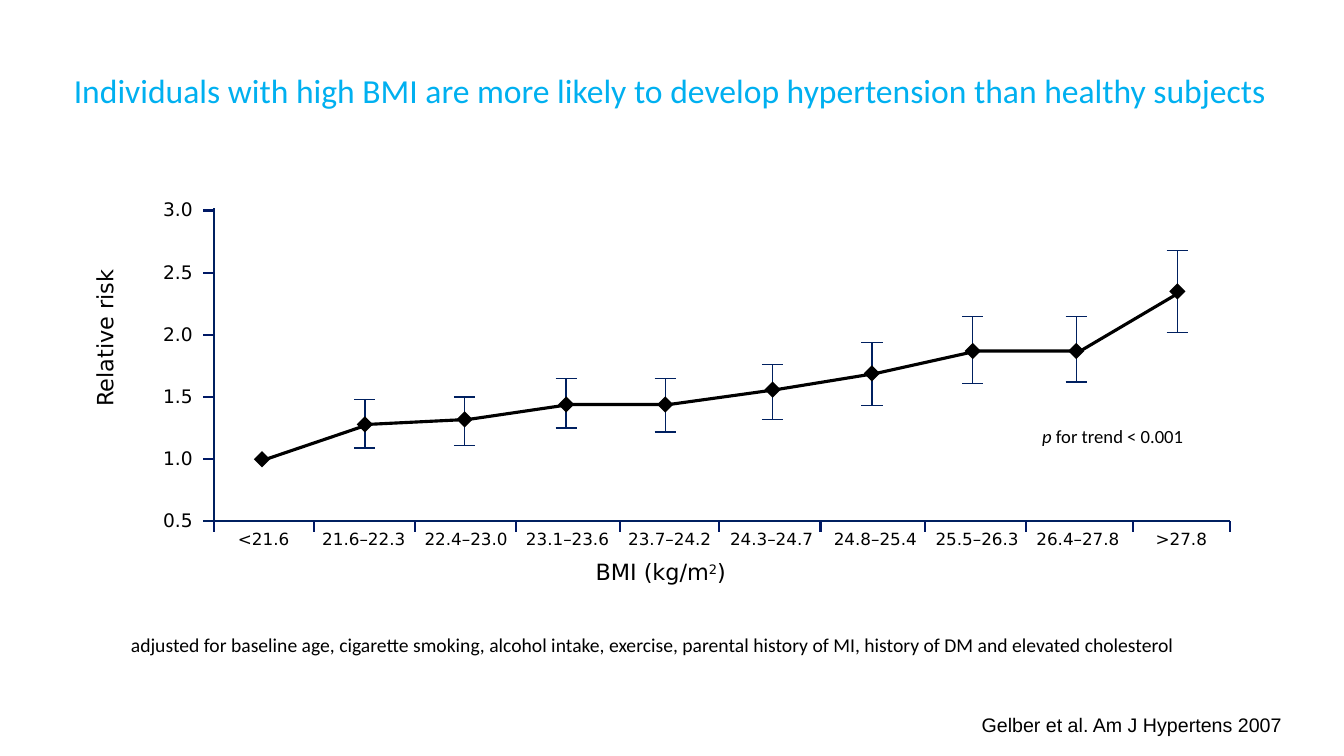
import pptx
import pptx.dml.color
import pptx.enum.shapes
import pptx.enum.text
import pptx.oxml
import pptx.oxml.ns
import pptx.util

Pt = pptx.util.Pt
ALIGN = pptx.enum.text.PP_ALIGN
ANCHOR = pptx.enum.text.MSO_ANCHOR

BLACK, TITLE_BLUE, AXIS_NAVY, TICK_NAVY = "000000", "00B0F0", "002060", "001965"
CHART_FONT = "DejaVu Sans"

# Axis geometry in points
AXIS_LEFT, AXIS_RIGHT, AXIS_TOP, AXIS_BOTTOM = 152.6, 878.4, 148.6, 372.4
TICK = 7.4
UNIT_HEIGHT = 88.8
RISK_TICKS = [3.0, 2.5, 2.0, 1.5, 1.0, 0.5]
BMI_TICKS = [152.6, 224.6, 296.6, 368.6, 442.8, 513.4, 586.1, 661, 733, 809.3, 878.4]

# BMI group, label centre, marker centre, relative risk, lower and upper limit
GROUPS = [
    ("<21.6", 188.3, 187.2, 1.00, None, None),
    ("21.6–22.3", 259.9, 260.6, 1.28, 1.09, 1.48),
    ("22.4–23.0", 333, 331.9, 1.32, 1.11, 1.50),
    ("23.1–23.6", 405.4, 404.4, 1.44, 1.25, 1.65),
    ("23.7–24.2", 478.4, 475.2, 1.44, 1.22, 1.65),
    ("24.3–24.7", 551.2, 551.9, 1.56, 1.32, 1.76),
    ("24.8–25.4", 625.3, 622.8, 1.69, 1.43, 1.94),
    ("25.5–26.3", 698, 694.8, 1.87, 1.61, 2.15),
    ("26.4–27.8", 770, 768.8, 1.87, 1.62, 2.15),
    (">27.8", 843.8, 841, 2.35, 2.02, 2.68),
]


def color(value):
    return pptx.dml.color.RGBColor.from_string(value)


def risk_y(risk):
    return AXIS_BOTTOM - (risk - 0.5) * UNIT_HEIGHT


def add_text(slide, pieces, left, top, width, height, size, font=CHART_FONT,
             align=ALIGN.CENTER, anchor=ANCHOR.TOP, fill=BLACK, wrap=True):
    """Add a one-paragraph text box, one run per piece."""
    shape = slide.shapes.add_textbox(Pt(left), Pt(top), Pt(width), Pt(height))
    frame = shape.text_frame
    frame.word_wrap = wrap
    frame.vertical_anchor = anchor
    paragraph = frame.paragraphs[0]
    paragraph.alignment = align
    paragraph.text = pieces[0]
    for piece in pieces[1:]:
        paragraph.add_run().text = piece
    for run in paragraph.runs:
        run.font.size = Pt(size)
        run.font.name = font
        run.font.color.rgb = color(fill)
    return shape


def add_line(slide, x1, y1, x2, y2, stroke, width):
    line = slide.shapes.add_connector(
        pptx.enum.shapes.MSO_CONNECTOR.STRAIGHT, Pt(x1), Pt(y1), Pt(x2), Pt(y2))
    line.line.color.rgb = color(stroke)
    line.line.width = Pt(width)
    properties = line._element.spPr
    properties.append(pptx.oxml.parse_xml(
        "<a:effectLst %s/>" % pptx.oxml.ns.nsdecls("a")))


def add_error_bar(slide, x, low, high):
    bottom, top = risk_y(low), risk_y(high)
    add_line(slide, x, top, x, bottom, AXIS_NAVY, 1)
    for y in (top, bottom):
        add_line(slide, x - 7.6, y, x + 7.6, y, AXIS_NAVY, 1)


def add_marker(slide, x, y, size=11.6):
    marker = slide.shapes.add_shape(
        pptx.enum.shapes.MSO_SHAPE.DIAMOND,
        Pt(x - size / 2), Pt(y - size / 2), Pt(size), Pt(size))
    marker.shadow.inherit = False
    marker.fill.solid()
    marker.fill.fore_color.rgb = color(BLACK)
    marker.line.fill.background()


def add_trend(slide, points):
    vertices = [(Pt(x), Pt(y)) for x, y in points]
    builder = slide.shapes.build_freeform(*vertices[0])
    builder.add_line_segments(vertices[1:], close=False)
    trend = builder.convert_to_shape()
    trend.shadow.inherit = False
    trend.fill.background()
    trend.line.color.rgb = color(BLACK)
    trend.line.width = Pt(2.25)


def add_axes(slide):
    add_line(slide, AXIS_LEFT, AXIS_TOP, AXIS_LEFT, AXIS_BOTTOM, AXIS_NAVY, 1.5)
    add_line(slide, AXIS_LEFT - TICK, AXIS_BOTTOM, AXIS_RIGHT, AXIS_BOTTOM, AXIS_NAVY, 1.5)
    for risk in RISK_TICKS:
        y = risk_y(risk)
        if risk > 0.5:
            add_line(slide, AXIS_LEFT - TICK, y, AXIS_LEFT, y, TICK_NAVY, 1.5)
        add_text(slide, [f"{risk:.1f}"], 101.5, y - 0.8 - 11.9, 43.2, 23.8, 13.3,
                 align=ALIGN.RIGHT, anchor=ANCHOR.MIDDLE)
    for x in BMI_TICKS:
        add_line(slide, x, AXIS_BOTTOM, x, AXIS_BOTTOM + TICK, TICK_NAVY, 1.5)


def add_series(slide):
    # The line runs slightly right of the marker centres
    add_trend(slide, [(x + 2.9, risk_y(risk)) for _, _, x, risk, _, _ in GROUPS])
    for label, label_x, x, risk, low, high in GROUPS:
        if low is not None:
            add_error_bar(slide, x, low, high)
        add_marker(slide, x, risk_y(risk))
        add_text(slide, [label], label_x - 42, 373.7, 84, 21.8, 12, anchor=ANCHOR.MIDDLE)


def main():
    presentation = pptx.Presentation()
    presentation.slide_width = Pt(960)
    presentation.slide_height = Pt(540)
    slide = presentation.slides.add_slide(presentation.slide_layouts[6])

    # Title
    title = add_text(
        slide, ["Individuals with high BMI are more likely to develop hypertension than healthy subjects"],
        31.7, 43.9, 893.5, 41, 24, "Calibri", anchor=ANCHOR.MIDDLE, fill=TITLE_BLUE)
    frame = title.text_frame
    frame.margin_left = frame.margin_right = frame.margin_top = frame.margin_bottom = 0

    # Chart
    add_axes(slide)
    add_series(slide)

    # Axis titles
    risk_title = add_text(slide, ["Relative risk"], 0.7, 228.2, 148.3, 26.6, 16)
    risk_title.rotation = 270
    bmi_title = add_text(slide, ["BMI (kg/m", "2", ")"], 363.6, 395.3, 216.7, 26.6, 16)
    superscript = bmi_title.text_frame.paragraphs[0].runs[1]
    superscript._r.get_or_add_rPr().set("baseline", "30000")

    # Trend note
    note = add_text(slide, ["p ", "for trend < 0.001"], 737.3, 300.2, 116.6, 23.8, 13.3,
                    "Calibri", align=ALIGN.LEFT, wrap=False)
    note.text_frame.paragraphs[0].runs[0].font.italic = True

    # Footnote and reference
    add_text(slide, ["adjusted for baseline age, cigarette smoking, alcohol intake, exercise, "
                     "parental history of MI, history of DM and elevated cholesterol"],
             34.6, 448.6, 863.3, 24.5, 14, "Calibri")
    add_text(slide, ["Gelber et al. Am J Hypertens 2007"], 694.1, 505.4, 230.4, 24.5, 14,
             "Arial", align=ALIGN.LEFT, wrap=False)

    presentation.save("out.pptx")


if __name__ == "__main__":
    main()
